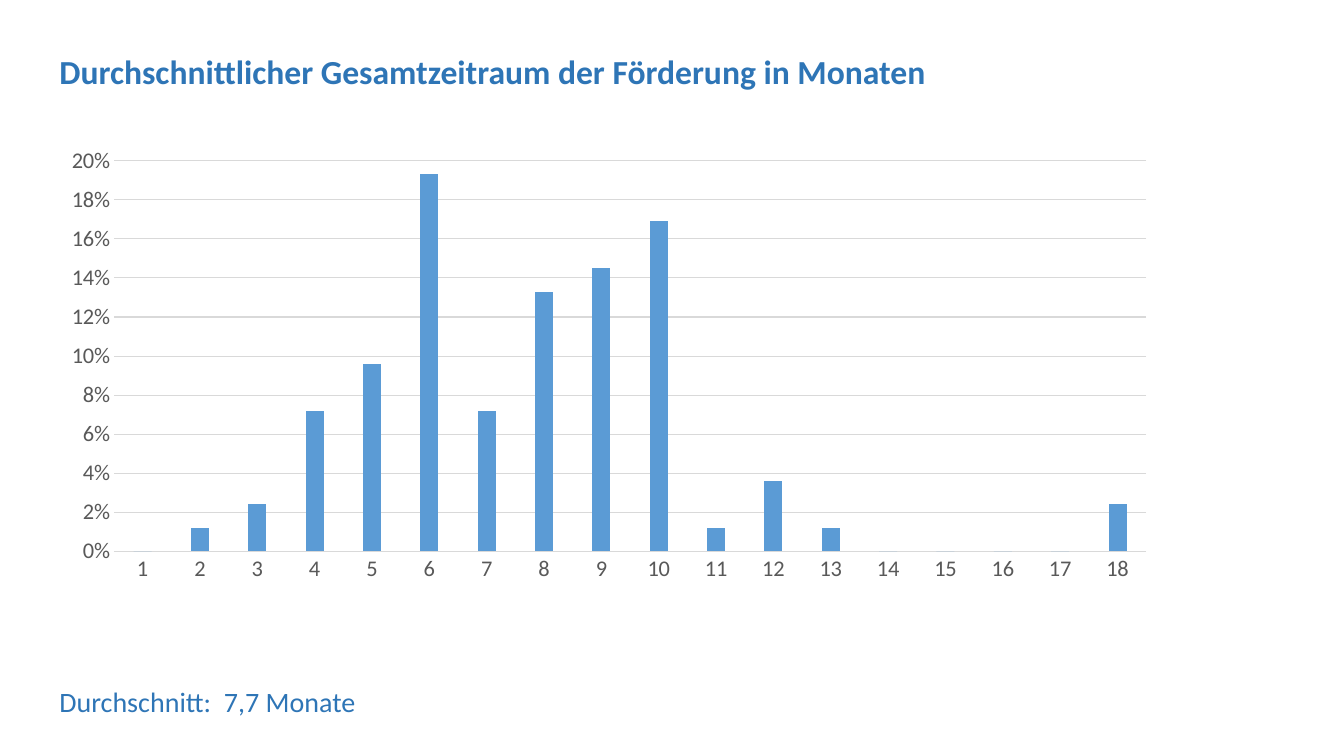
from pptx import Presentation
from pptx.chart.data import CategoryChartData
from pptx.dml.color import RGBColor
from pptx.enum.chart import XL_CHART_TYPE, XL_TICK_MARK
from pptx.util import Pt

PX = 9144
FONT = "Calibri"
COLORS = {"heading": "2E75B6", "bar": "5B9BD5", "label": "595959", "grid": "D9D9D9", "back": "FFFFFF"}
SHARES = [0, 0.012, 0.024, 0.072, 0.096, 0.193, 0.072, 0.133, 0.145,
          0.169, 0.012, 0.036, 0.012, 0, 0, 0, 0, 0.024]


def color(name):
    return RGBColor.from_string(COLORS[name])


def add_text(slide, box, text, size, bold=False):
    sp = slide.shapes.add_textbox(*(v * PX for v in box))
    tf = sp.text_frame
    tf.word_wrap = True
    r = tf.paragraphs[0].add_run()
    r.text = text
    r.font.name = FONT
    r.font.size = Pt(size)
    r.font.bold = bold
    r.font.color.rgb = color("heading")


def style_line(line):
    line.color.rgb = color("grid")
    line.width = Pt(0.75)


def style_axis(axis):
    axis.major_tick_mark = XL_TICK_MARK.NONE
    axis.minor_tick_mark = XL_TICK_MARK.NONE
    font = axis.tick_labels.font
    font.name = FONT
    font.size = Pt(16)
    font.color.rgb = color("label")


def add_duration_chart(slide, box):
    data = CategoryChartData(number_format="0%")
    data.categories = [str(month) for month in range(1, len(SHARES) + 1)]
    data.add_series("Series 1", SHARES)
    chart = slide.shapes.add_chart(
        XL_CHART_TYPE.COLUMN_CLUSTERED, *(v * PX for v in box), data).chart
    chart.has_legend = False
    chart.has_title = False
    chart.font.name = FONT
    chart.font.size = Pt(10)

    plot = chart.plots[0]
    plot.gap_width = 219
    plot.overlap = -27
    plot.vary_by_categories = False
    fill = plot.series[0].format.fill
    fill.solid()
    fill.fore_color.rgb = color("bar")

    months, shares = chart.category_axis, chart.value_axis
    style_axis(months)
    style_axis(shares)
    style_line(months.format.line)
    shares.format.line.fill.background()
    shares.minimum_scale = 0
    shares.maximum_scale = 0.2
    shares.major_unit = 0.02
    shares.tick_labels.number_format = "0%"
    shares.tick_labels.number_format_is_linked = False
    style_line(shares.major_gridlines.format.line)


def build_slide(prs, box):
    slide = prs.slides.add_slide(prs.slide_layouts[6])
    fill = slide.background.fill
    fill.solid()
    fill.fore_color.rgb = color("back")
    x, y, w, h = box
    add_text(slide, (x, y, w, 50),
             "Durchschnittlicher Gesamtzeitraum der Förderung in Monaten", 24, True)
    add_duration_chart(slide, (x, y + 91, w - 71, 450))
    add_text(slide, (x, y + h - 44, w, 44), "Durchschnitt:  7,7 Monate", 20)


def main():
    prs = Presentation()
    prs.slide_width = 1333 * PX
    prs.slide_height = 750 * PX
    build_slide(prs, (49, 46, 1181, 672))
    prs.save("out.pptx")


if __name__ == "__main__":
    main()
